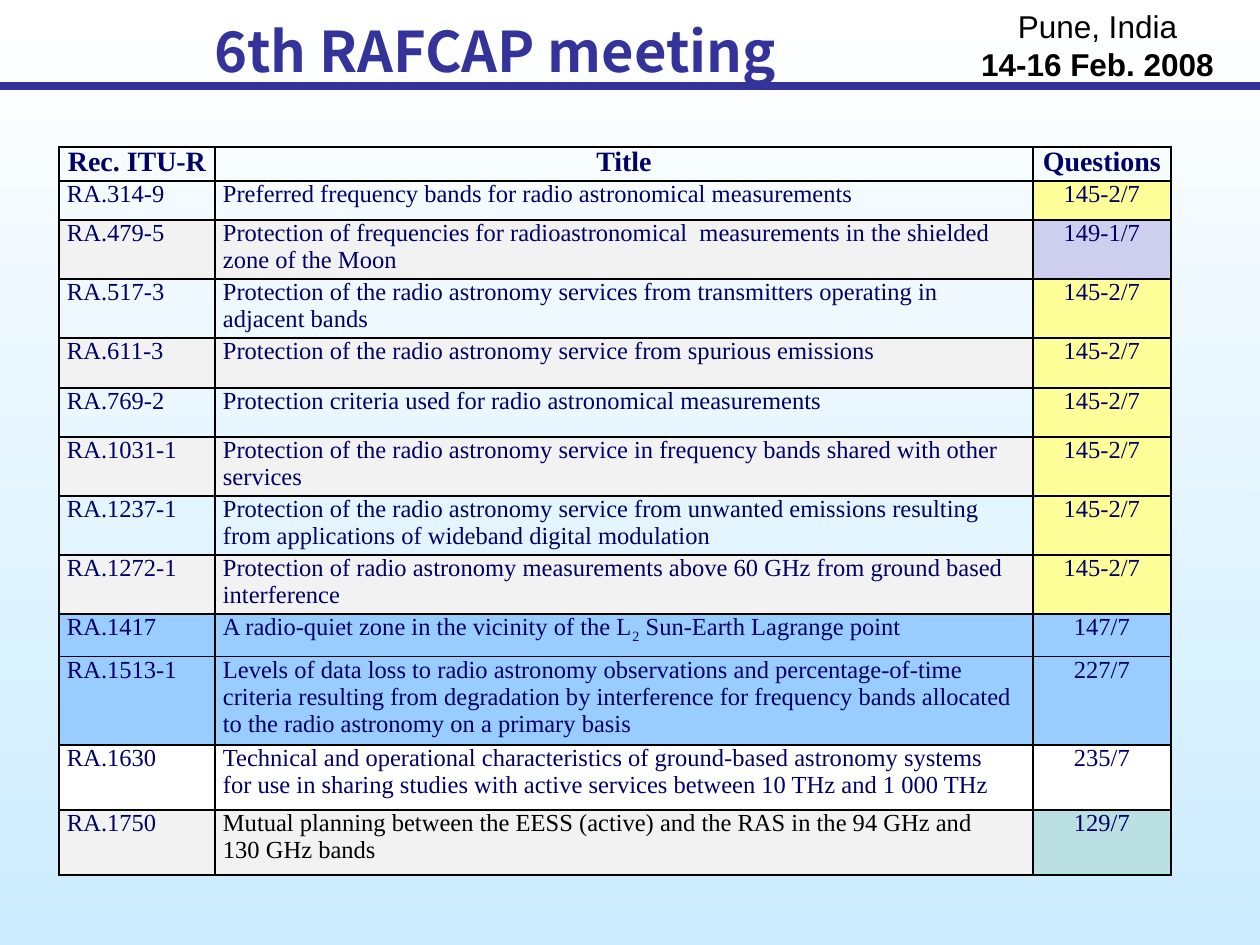
from lxml import etree
from pptx import Presentation
from pptx import util as u
from pptx.dml.color import RGBColor
from pptx.enum import shapes, text
from pptx.oxml.ns import qn

NAVY, INDIGO, BLACK = "000066", "333399", "000000"
YELLOW, LILAC, SKY, TEAL = "FFFF99", "CECEEF", "99CCFF", "BBE0E3"
GREY, WHITE = "F2F2F2", "FFFFFF"
SERIF = "Times New Roman"
CENTER, LEFT = text.PP_ALIGN.CENTER, text.PP_ALIGN.LEFT
COLUMN_WIDTHS = [156, 818, 138]

HEADINGS = ["Rec. ITU-R", "Title", "Questions"]
RECOMMENDATIONS = [
    (39, "RA.314-9", ["Preferred frequency bands for radio astronomical measurements"],
     "145-2/7", None, YELLOW),
    (59, "RA.479-5", ["Protection of frequencies for radioastronomical  measurements in the shielded",
                      "zone of the Moon"], "149-1/7", GREY, LILAC),
    (59, "RA.517-3", ["Protection of the radio astronomy services from transmitters operating in "
                      "adjacent bands"], "145-2/7", None, YELLOW),
    (50, "RA.611-3", ["Protection of the radio astronomy service from spurious emissions"],
     "145-2/7", GREY, YELLOW),
    (49, "RA.769-2", ["Protection criteria used for radio astronomical measurements"],
     "145-2/7", None, YELLOW),
    (59, "RA.1031-1", ["Protection of the radio astronomy service in frequency bands shared with other",
                       "services"], "145-2/7", GREY, YELLOW),
    (59, "RA.1237-1", ["Protection of the radio astronomy service from unwanted emissions resulting",
                       "from applications of wideband digital modulation"], "145-2/7", None, YELLOW),
    (59, "RA.1272-1", ["Protection of radio astronomy measurements above 60 GHz from ground based",
                       "interference"], "145-2/7", GREY, YELLOW),
    (43, "RA.1417", [("A radio-quiet zone in the vicinity of the L", "2", " Sun-Earth Lagrange point")],
     "147/7", SKY, SKY),
    (88, "RA.1513-1", ["Levels of data loss to radio astronomy observations and percentage-of-time",
                       "criteria resulting from degradation by interference for frequency bands allocated",
                       "to the radio astronomy on a primary basis"], "227/7", SKY, SKY),
    (65, "RA.1630", ["Technical and operational characteristics of ground-based astronomy systems",
                     "for use in sharing studies with active services between 10 THz and 1 000 THz"],
     "235/7", WHITE, WHITE),
    (65, "RA.1750", ["Mutual planning between the EESS (active) and the RAS in the 94 GHz and",
                     "130 GHz bands"], "129/7", GREY, TEAL),
]


def px(length):
    """Turn px into EMU at 126 px to the inch."""
    return u.Emu(round(length * 914400 / 126))


def rgb(code):
    """Turn a hex string into a colour."""
    return RGBColor.from_string(code)


def add_run(paragraph, words, size, color, font=SERIF, bold=False):
    """Add one formatted run to a paragraph."""
    run = paragraph.add_run()
    run.text = words
    run.font.size, run.font.name, run.font.bold = u.Pt(size), font, bold
    run.font.color.rgb = rgb(color)
    for tag in ("a:ea", "a:cs"):
        etree.SubElement(run.font._element, qn(tag), typeface=font)
    return run


def write_lines(frame, lines, size, color, align, bold=False):
    """Write each line as a paragraph; odd parts of a tuple are subscripts."""
    for index, line in enumerate(lines):
        paragraph = frame.paragraphs[0] if index == 0 else frame.add_paragraph()
        paragraph.alignment = align
        parts = (line,) if isinstance(line, str) else line
        for place, part in enumerate(parts):
            run = add_run(paragraph, part, size, color, bold=bold)
            if place % 2:
                run.font._element.set("baseline", "-25000")


def add_borders(cell):
    """Draw a thin black line on all four sides of a cell."""
    properties = cell._tc.get_or_add_tcPr()
    for index, side in enumerate(("lnL", "lnR", "lnT", "lnB")):
        border = etree.Element(qn(f"a:{side}"), w=str(u.Pt(1)))
        fill = etree.SubElement(border, qn("a:solidFill"))
        etree.SubElement(fill, qn("a:srgbClr"), val=BLACK)
        properties.insert(index, border)


def fill_cell(cell, lines, size, color, align, fill=None, bold=False):
    """Set the text, fill, margins and borders of a table cell."""
    cell.margin_left = cell.margin_right = px(8)
    cell.margin_top = cell.margin_bottom = 0
    write_lines(cell.text_frame, lines, size, color, align, bold)
    if fill:
        cell.fill.solid()
        cell.fill.fore_color.rgb = rgb(fill)
    else:
        cell.fill.background()
    add_borders(cell)


def add_background(slide):
    """Fill the slide from white at the top to pale blue."""
    fill = slide.background.fill
    fill.gradient()
    fill.gradient_angle = 270
    for stop, (position, color) in zip(fill.gradient_stops, [(0, WHITE), (1, "CCECFF")]):
        stop.position = position
        stop.color.rgb = rgb(color)


def add_label(slide, left, top, width, height, anchor):
    """Add an empty unwrapped text box without margins."""
    frame = slide.shapes.add_textbox(px(left), px(top), px(width), px(height)).text_frame
    frame.word_wrap = False
    frame.vertical_anchor = anchor
    frame.margin_left = frame.margin_right = frame.margin_top = frame.margin_bottom = 0
    return frame


def add_header(slide, left, top, width, height):
    """Place the meeting title, venue and rule in the top band."""
    title = add_label(slide, left + 74, top + 16, 843, 59, text.MSO_ANCHOR.TOP).paragraphs[0]
    title.alignment = CENTER
    add_run(title, "6th RAFCAP meeting", 32, INDIGO, "Noto Sans CJK KR", True)

    venue = add_label(slide, left + 967, top, 261, 90, text.MSO_ANCHOR.MIDDLE)
    for paragraph, words, bold in [(venue.paragraphs[0], "Pune, India", False),
                                   (venue.add_paragraph(), "14-16 Feb. 2008", True)]:
        paragraph.alignment = CENTER
        add_run(paragraph, words, 18, BLACK, "Arial", bold)

    bottom = px(top + height)
    rule = slide.shapes.add_connector(
        shapes.MSO_CONNECTOR.STRAIGHT, px(left), bottom, px(left + width), bottom)
    rule.line.color.rgb = rgb(INDIGO)
    rule.line.width = u.Pt(4.5)
    etree.SubElement(rule._element.spPr, qn("a:effectLst"))


def add_recommendations(slide, left, top):
    """Place the table of recommendations and their questions."""
    heights = [34] + [row[0] for row in RECOMMENDATIONS]
    table = slide.shapes.add_table(
        len(heights), len(COLUMN_WIDTHS), px(left), px(top),
        px(sum(COLUMN_WIDTHS)), px(sum(heights))).table
    table.first_row = table.horz_banding = False
    for column, width in zip(table.columns, COLUMN_WIDTHS):
        column.width = px(width)
    for row, height in zip(table.rows, heights):
        row.height = px(height)
    for index, heading in enumerate(HEADINGS):
        fill_cell(table.cell(0, index), [heading], 16, NAVY, CENTER, bold=True)
    for index, (_, number, title, question, fill, mark) in enumerate(RECOMMENDATIONS, 1):
        title_color = BLACK if number == "RA.1750" else NAVY
        fill_cell(table.cell(index, 0), [number], 14, NAVY, LEFT, fill)
        fill_cell(table.cell(index, 1), title, 14, title_color, LEFT, fill)
        fill_cell(table.cell(index, 2), [question], 14, NAVY, CENTER, mark)


def main():
    """Build and save the slide."""
    deck = Presentation()
    deck.slide_width, deck.slide_height = px(1260), px(945)
    slide = deck.slides.add_slide(deck.slide_layouts[6])
    add_background(slide)
    add_header(slide, 0, 0, 1260, 86)
    add_recommendations(slide, 59, 147)
    deck.save("out.pptx")


if __name__ == "__main__":
    main()
